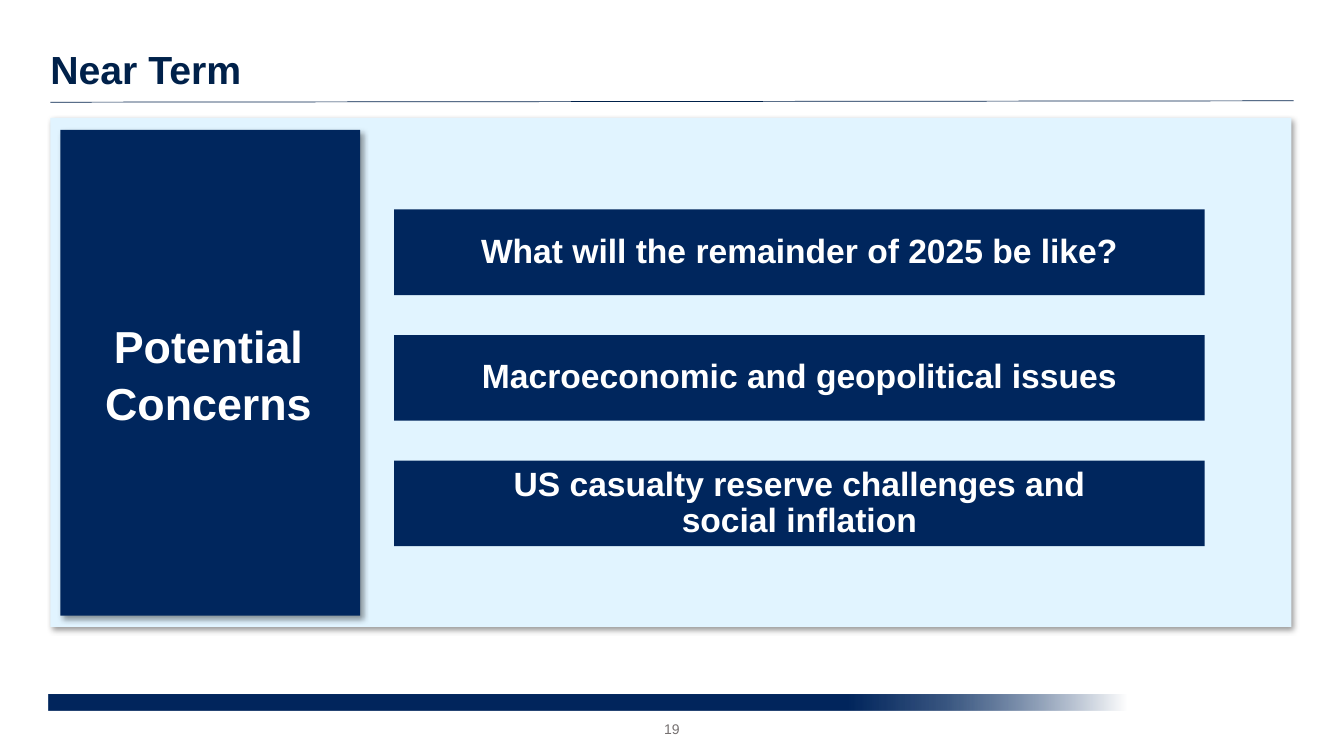
from dataclasses import dataclass

from lxml import etree
from pptx import Presentation
from pptx.dml.color import RGBColor
from pptx.enum import shapes, text
from pptx.oxml import ns
from pptx.util import Pt


@dataclass(frozen=True)
class Theme:
    font: str = "Arial"
    navy: str = "00265D"
    title_navy: str = "00214A"
    pale_blue: str = "E1F4FF"
    white: str = "FFFFFF"
    grey: str = "767171"
    shadow: str = "000000"
    title_size: int = 28
    heading_size: int = 32
    item_size: int = 24
    number_size: int = 10


theme = Theme()
DRAWING = f'xmlns:a="{ns.nsuri("a")}"'


def add_block(left, top, width, height, color, shadow=False):
    shape = slide.shapes.add_shape(shapes.MSO_SHAPE.RECTANGLE, Pt(left), Pt(top), Pt(width), Pt(height))
    shape.shadow.inherit = False
    shape.fill.solid()
    shape.fill.fore_color.rgb = RGBColor.from_string(color)
    shape.line.fill.background()
    if shadow:
        effects = shape.element.spPr.find(ns.qn("a:effectLst"))
        effects.append(etree.fromstring(
            f'<a:outerShdw {DRAWING} blurRad="50800" dist="38100" dir="2700000" algn="tl" rotWithShape="0">'
            f'<a:srgbClr val="{theme.shadow}"><a:alpha val="40000"/></a:srgbClr></a:outerShdw>'))
    return shape


def write(shape, lines, size, color, bold=True, align=text.PP_ALIGN.CENTER,
          anchor=text.MSO_ANCHOR.MIDDLE, spacing=0.9, margins=(6.5, 6.5, 6.5, 6.5)):
    """Fill the shape with one paragraph; margins run left, top, right, bottom."""
    frame = shape.text_frame
    frame.word_wrap = True
    frame.auto_size = text.MSO_AUTO_SIZE.NONE
    frame.vertical_anchor = anchor
    frame.margin_left, frame.margin_top, frame.margin_right, frame.margin_bottom = map(Pt, margins)
    paragraph = frame.paragraphs[0]
    paragraph.alignment = align
    paragraph.line_spacing = spacing
    for index, line in enumerate(lines):
        if index:
            paragraph.add_line_break()
        run = paragraph.add_run()
        run.text = line
        run.font.name = theme.font
        run.font.size = Pt(size)
        run.font.bold = bold
        run.font.color.rgb = RGBColor.from_string(color)


presentation = Presentation()
presentation.slide_width, presentation.slide_height = Pt(960), Pt(540)
slide = presentation.slides.add_slide(presentation.slide_layouts[5])

# Title and the rule under it
title = slide.shapes.title
title.left, title.top, title.width, title.height = Pt(0), Pt(0), Pt(960), Pt(72)
write(title, ["Near Term"], theme.title_size, theme.title_navy, align=text.PP_ALIGN.LEFT,
      anchor=text.MSO_ANCHOR.TOP, margins=(36, 36, 36, 0))

rule = slide.shapes.add_connector(shapes.MSO_CONNECTOR.STRAIGHT, Pt(36), Pt(73), Pt(924), Pt(72))
rule.line.color.rgb = RGBColor.from_string(theme.title_navy)
rule.line.width = Pt(0.5)
etree.SubElement(rule.element.spPr, ns.qn("a:effectLst"))

# Footer bar fading to white, and the slide number
bar = add_block(34.5, 496, 770, 11.75, theme.navy)
bar.fill.gradient()
bar.fill.gradient_angle = 0
stops = bar.element.spPr.find(ns.qn("a:gradFill")).find(ns.qn("a:gsLst"))
for stop in list(stops):
    stops.remove(stop)
for position, color, opacity in ((0, theme.navy, 100), (74, theme.navy, 100),
                                 (83, theme.navy, 78), (100, theme.white, 100)):
    stops.append(etree.fromstring(
        f'<a:gs {DRAWING} pos="{position * 1000}"><a:srgbClr val="{color}">'
        f'<a:alpha val="{opacity * 1000}"/></a:srgbClr></a:gs>'))

number = slide.shapes.add_textbox(Pt(399), Pt(506), Pt(162), Pt(29))
write(number, ["19"], theme.number_size, theme.grey, bold=False, spacing=1)

# Panel with its heading block
add_block(36, 84.25, 886.5, 363.5, theme.pale_blue, shadow=True)
heading = add_block(43.2, 92.75, 214, 347, theme.navy, shadow=True)
write(heading, ["Potential Concerns"], theme.heading_size, theme.white, spacing=1.05,
      margins=(6, 3.6, 8.5, 3.6))

# Concerns, evenly stacked
concerns = (
    ["What will the remainder of 2025 be like?"],
    ["Macroeconomic and geopolitical issues"],
    ["US casualty reserve challenges and", "social inflation"],
)
for row, lines in enumerate(concerns):
    concern = add_block(281.5, 149.6 + row * 89.7, 579, 61.2, theme.navy)
    write(concern, lines, theme.item_size, theme.white)

presentation.save("out.pptx")
